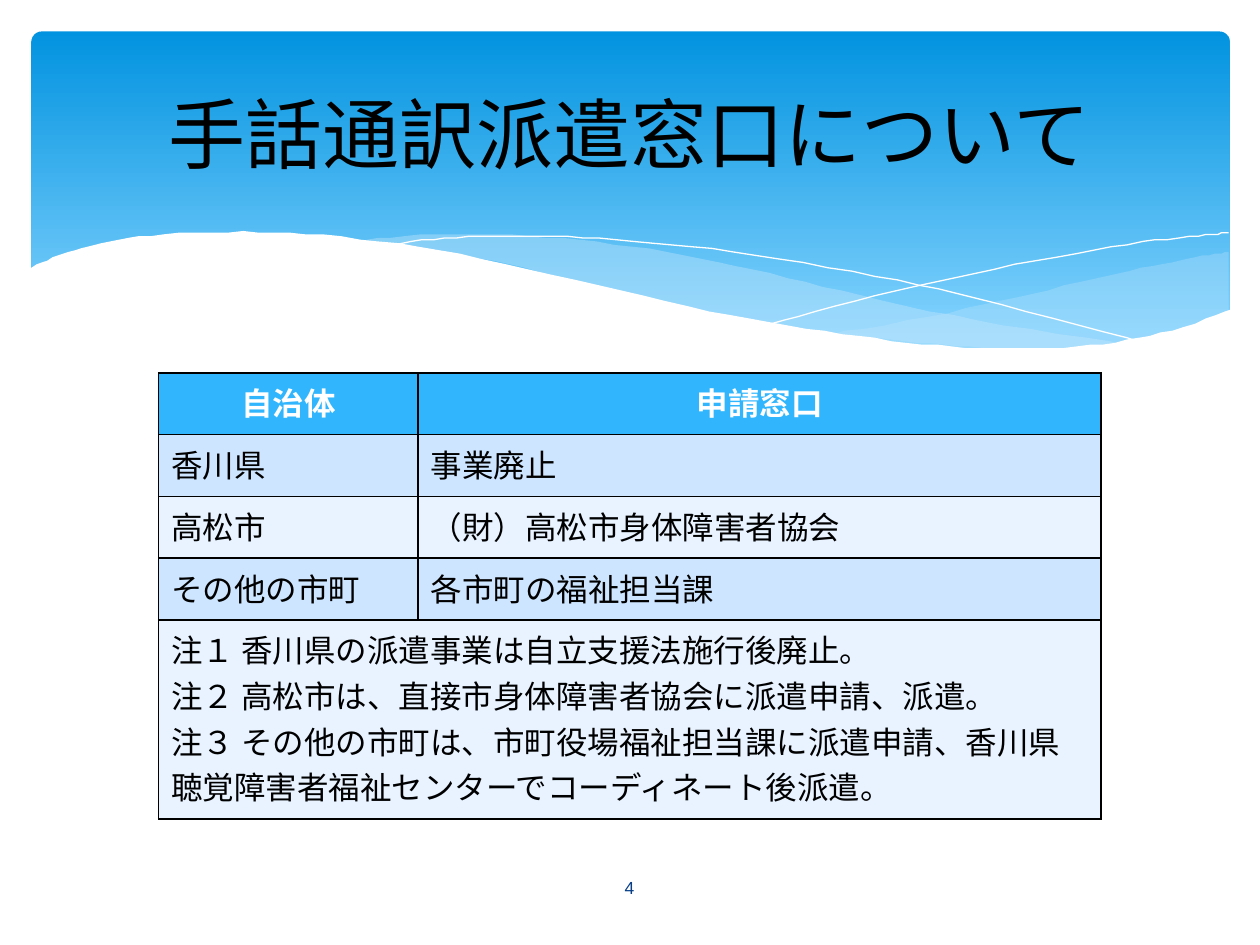
from dataclasses import dataclass

from lxml import etree
from pptx import Presentation
from pptx.dml.color import RGBColor
from pptx.enum import shapes, text
from pptx.oxml.ns import qn
from pptx.util import Pt

Point = tuple[float, float]
Curve = tuple[Point, ...]


@dataclass(frozen=True)
class Theme:
    sky: str = "0293E0"
    pale: str = "83D3FE"
    mist: str = "C6E7FC"
    white: str = "FFFFFF"
    black: str = "000000"
    navy: str = "073E87"
    head: str = "31B6FD"
    band: str = "CDE5FE"
    light: str = "E8F3FF"
    font: str = "Calibri"
    digit: str = "Arial"
    title: int = 44
    body: int = 18
    small: int = 10


@dataclass(frozen=True)
class Wave:
    """Smooth curves joined end to end; without a fill it is a hairline."""
    curves: tuple[Curve, ...]
    fill: str | None = None
    alpha: int = 100


@dataclass(frozen=True)
class Row:
    cells: tuple[str, ...]
    fill: str
    high: float = 35.3
    head: bool = False


T = Theme()
LEFT, CENTER = text.PP_ALIGN.LEFT, text.PP_ALIGN.CENTER
COLS = (148.3, 390.2)

WAVES = (
    Wave((((702.5, 144), (682.6, 147), (652.3, 153.4), (599, 165.6),
           (542.2, 178.6), (476, 190.8)),
          ((476, 190.8), (517, 195), (562.3, 198.7), (601, 199.8),
           (640, 197.6), (668, 192.6), (702.5, 177.8))), T.mist, 29),
    Wave((((206, 137.5), (247.7, 133.9), (302.4, 135), (361, 141),
           (420.5, 151.9), (481, 166.3), (558, 182.9), (643, 196.6)),
          ((643, 196.6), (610.5, 199.8), (573, 200.9), (529.9, 198),
           (478.8, 191.5), (420.5, 181.4), (353.5, 167), (290.9, 151.2),
           (246.2, 143.3), (206, 137.5))), T.mist, 40),
    Wave((((222.5, 140.4), (254, 136.1), (299.5, 134.6), (352, 136.8),
           (419, 144), (500.4, 157.7), (572.4, 174.2), (653, 195.8)),)),
    Wave((((441.4, 185), (500.4, 169.2), (580.3, 151.2), (644.4, 139.7),
           (684.7, 134.6), (702, 133.2)),)),
    Wave((((703.4, 177.1), (669.6, 188.6), (630, 196.6), (582.5, 199.4),
           (535.7, 197.3), (481, 190.8), (416.9, 180), (342, 163.4),
           (262.8, 145.4), (195.1, 135.4), (139, 132.5), (85.7, 134.6),
           (54, 140.4), (33.1, 146.2), (16.6, 153.4)),
          ((16.6, 236.9), (703.4, 236.9))), T.white),
)

NOTES = "\n".join((
    "注１ 香川県の派遣事業は自立支援法施行後廃止。",
    "注２ 高松市は、直接市身体障害者協会に派遣申請、派遣。",
    "注３ その他の市町は、市町役場福祉担当課に派遣申請、"
    "香川県聴覚障害者福祉センターでコーディネート後派遣。",
))

ROWS = (
    Row(("自治体", "申請窓口"), T.head, head=True),
    Row(("香川県", "事業廃止"), T.band),
    Row(("高松市", "（財）高松市身体障害者協会"), T.light),
    Row(("その他の市町", "各市町の福祉担当課"), T.band),
    Row((NOTES,), T.light, 113.8),
)


def rgb(code: str) -> RGBColor:
    return RGBColor.from_string(code)


def write(frame, words: str, *, size: int = T.body, font: str = T.font,
          color: str = T.black, bold: bool = False, align=LEFT) -> None:
    frame.text = words
    frame.word_wrap = True
    for para in frame.paragraphs:
        para.alignment = align
        for run in para.runs:
            run.font.size, run.font.name, run.font.bold = Pt(size), font, bold
            run.font.color.rgb = rgb(color)


def place(shape, left: float, top: float, wide: float, high: float) -> None:
    shape.left, shape.top = Pt(left), Pt(top)
    shape.width, shape.height = Pt(wide), Pt(high)


def smooth(knots: Curve, steps: int = 6) -> list[Point]:
    """Catmull-Rom spline through the knots."""
    if len(knots) < 3:
        return list(knots)
    ends = (knots[0], *knots, knots[-1])
    dots = []
    for a, b, c, d in zip(ends, ends[1:], ends[2:], ends[3:]):
        for step in range(steps):
            t = step / steps
            dots.append(tuple(
                q + t / 2 * (r - p + t * (2 * p - 5 * q + 4 * r - s
                                          + t * (3 * (q - r) + s - p)))
                for p, q, r, s in zip(a, b, c, d)))
    return dots + [knots[-1]]


def draw_wave(slide, wave: Wave) -> None:
    dots = [dot for curve in wave.curves for dot in smooth(curve)]
    pen = slide.shapes.build_freeform(*dots[0], scale=Pt(1))
    pen.add_line_segments(dots[1:], close=wave.fill is not None)
    shape = pen.convert_to_shape()
    shape.shadow.inherit = False
    if wave.fill is None:
        shape.fill.background()
        shape.line.color.rgb = rgb(T.white)
        shape.line.width = Pt(0)
        return
    shape.line.fill.background()
    shape.fill.solid()
    shape.fill.fore_color.rgb = rgb(wave.fill)
    if wave.alpha < 100:
        tone = shape.fill._xPr.find(f".//{qn('a:srgbClr')}")
        etree.SubElement(tone, qn("a:alpha"), val=str(wave.alpha * 1000))


def draw_banner(slide) -> None:
    box = slide.shapes.add_shape(shapes.MSO_SHAPE.ROUNDED_RECTANGLE,
                                 Pt(18), Pt(18), Pt(684.7), Pt(194.4))
    box.adjustments[0] = 0.03
    box.shadow.inherit = False
    box.line.fill.background()
    box.fill.gradient()
    box.fill.gradient_angle = 270
    for stop, color, pos in zip(box.fill.gradient_stops, (T.sky, T.pale), (0, 0.9)):
        stop.color.rgb, stop.position = rgb(color), pos


def edge(cell) -> None:
    """Thin border on all four sides; must come before the cell's fill."""
    props = cell._tc.get_or_add_tcPr()
    for side in "LRTB":
        line = etree.SubElement(props, qn(f"a:ln{side}"), w=str(Pt(1)))
        fill = etree.SubElement(line, qn("a:solidFill"))
        etree.SubElement(fill, qn("a:srgbClr"), val=T.black)


def draw_table(slide) -> None:
    high = sum(row.high for row in ROWS)
    grid = slide.shapes.add_table(len(ROWS), len(COLS), Pt(90.7), Pt(213.1),
                                  Pt(sum(COLS)), Pt(high)).table
    grid.horz_banding = False
    for col, wide in zip(grid.columns, COLS):
        col.width = Pt(wide)
    for y, row in enumerate(ROWS):
        grid.rows[y].height = Pt(row.high)
        if len(row.cells) < len(COLS):
            grid.cell(y, 0).merge(grid.cell(y, len(COLS) - 1))
        for cell in grid.rows[y].cells:
            edge(cell)
            cell.fill.solid()
            cell.fill.fore_color.rgb = rgb(row.fill)
        for x, words in enumerate(row.cells):
            write(grid.cell(y, x).text_frame, words, bold=row.head,
                  color=T.white if row.head else T.black,
                  align=CENTER if row.head else LEFT)


def main() -> None:
    deck = Presentation()
    deck.slide_width, deck.slide_height = Pt(720), Pt(540)
    slide = deck.slides.add_slide(deck.slide_layouts[5])
    draw_banner(slide)
    for wave in WAVES:
        draw_wave(slide, wave)

    title = slide.shapes.title
    slide.shapes._spTree.append(title._element)  # in front of the banner
    place(title, 36, 26.6, 648, 98.6)
    title.text_frame.vertical_anchor = text.MSO_ANCHOR.MIDDLE
    write(title.text_frame, "手話通訳派遣窓口について", size=T.title, align=CENTER)

    page = slide.shapes.add_textbox(Pt(314), Pt(492.5), Pt(91.4), Pt(28.8))
    page.text_frame.vertical_anchor = text.MSO_ANCHOR.MIDDLE
    write(page.text_frame, "4", size=T.small, font=T.digit, color=T.navy, align=CENTER)

    draw_table(slide)
    deck.save("out.pptx")


if __name__ == "__main__":
    main()
